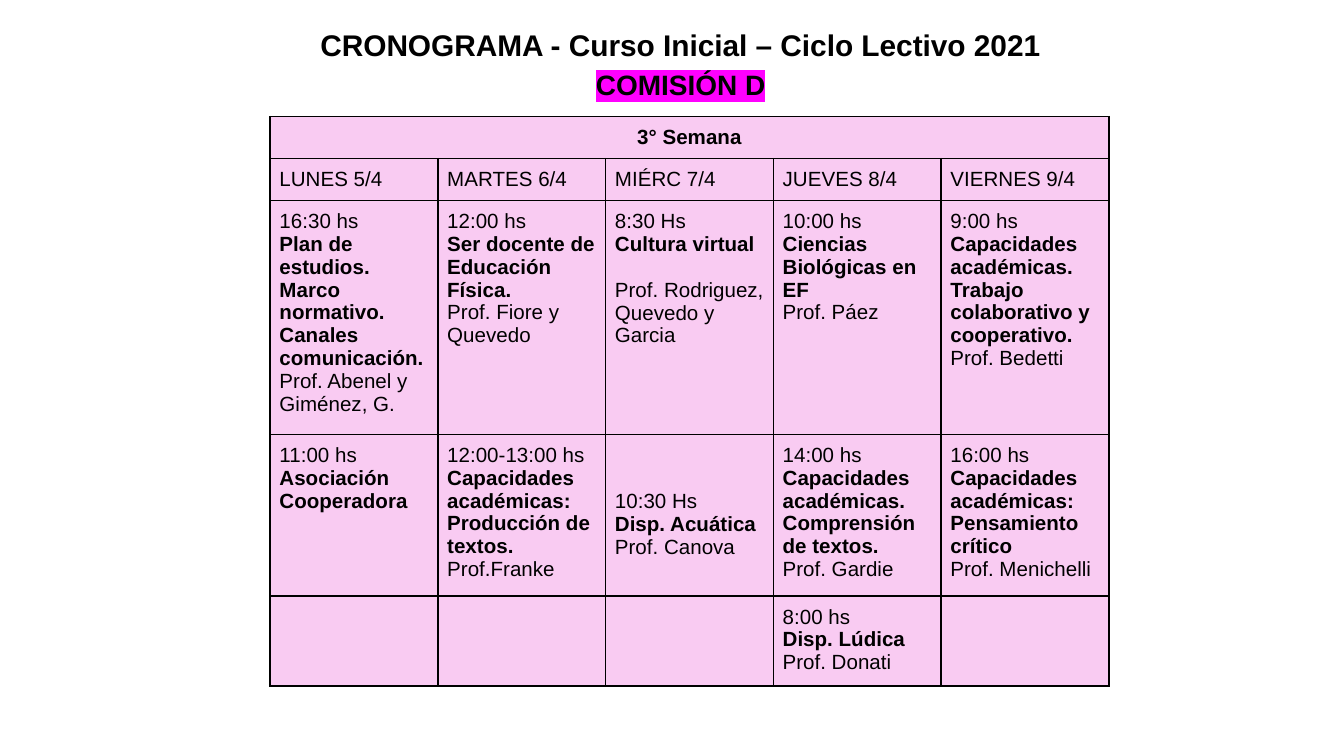
from lxml import etree
from pptx import Presentation
from pptx.dml.color import RGBColor
from pptx.enum import text
from pptx.oxml.ns import qn
from pptx.util import Pt

# Content
TITLE = [("CRONOGRAMA - Curso Inicial – Ciclo Lectivo 2021", 16), ("COMISIÓN D", 15)]
WEEK = "3° Semana"
DAYS = ["LUNES 5/4", "MARTES 6/4", "MIÉRC 7/4", "JUEVES 8/4", "VIERNES 9/4"]
# Each class: hour, subject lines, teachers
CLASSES = [
    [
        ["16:30 hs", "Plan de estudios. Marco normativo. Canales comunicación.",
         "Prof. Abenel y Giménez, G."],
        ["12:00 hs", "Ser docente de Educación Física.", "Prof. Fiore y Quevedo"],
        ["8:30 Hs", "Cultura virtual", "Prof. Rodriguez, Quevedo y Garcia"],
        ["10:00 hs", "Ciencias Biológicas en EF", "Prof. Páez"],
        ["9:00 hs", "Capacidades académicas. Trabajo colaborativo y cooperativo.",
         "Prof. Bedetti"],
    ],
    [
        ["11:00 hs", "Asociación Cooperadora"],
        ["12:00-13:00 hs", "Capacidades académicas: Producción de textos.", "Prof.Franke"],
        ["10:30 Hs", "Disp. Acuática", "Prof. Canova"],
        ["14:00 hs", "Capacidades académicas. Comprensión de textos.", "Prof. Gardie"],
        ["16:00 hs", "Capacidades académicas:", "Pensamiento crítico", "Prof. Menichelli"],
    ],
    [[], [], [], ["8:00 hs", "Disp. Lúdica", "Prof. Donati"], []],
]

# Layout and style
COLORS = {"text": "000000", "cell": "F9CBF2", "highlight": "FF00FF"}
FONT = "Arial"
ROW_HEIGHTS = [22.5, 22.5, 125.3, 86.6, 48.2]
COL_WIDTH = 89.86
LEFT, TOP = 144.7, 62.5
MARGIN = 5.04
LINE = 12.3  # height of one line of cell text


def write(p, words, size, bold):
    r = p.add_run()
    r.text = words
    for key, value in {"size": Pt(size), "bold": bold, "name": FONT}.items():
        setattr(r.font, key, value)
    r.font.color.rgb = RGBColor.from_string(COLORS["text"])
    return r


def add_color(parent, tag, color):
    el = etree.SubElement(parent, qn(tag))
    etree.SubElement(el, qn("a:srgbClr"), val=color)
    return el


def format_cell(cell):
    for side in ("left", "right", "top", "bottom"):
        setattr(cell, f"margin_{side}", Pt(MARGIN))
    cell.fill.solid()
    cell.fill.fore_color.rgb = RGBColor.from_string(COLORS["cell"])
    tc_pr = cell._tc.get_or_add_tcPr()
    for i, side in enumerate("LRTB"):
        ln = etree.Element(qn(f"a:ln{side}"), w=str(Pt(1)))
        add_color(ln, "a:solidFill", COLORS["text"])
        tc_pr.insert(i, ln)


def fill_class(cell, lines):
    tf = cell.text_frame
    for i, words in enumerate(lines):
        p = tf.add_paragraph() if i else tf.paragraphs[0]
        write(p, words, 11, i > 0 and not words.startswith("Prof."))


prs = Presentation()
prs.slide_width, prs.slide_height = Pt(720), Pt(405)
s = prs.slides.add_slide(prs.slide_layouts[5])

# Timetable
n_rows, n_cols = len(ROW_HEIGHTS), len(DAYS)
table = s.shapes.add_table(n_rows, n_cols, Pt(LEFT), Pt(TOP),
                           Pt(COL_WIDTH * n_cols), Pt(sum(ROW_HEIGHTS))).table
for col in table.columns:
    col.width = Pt(COL_WIDTH)
for row, height in zip(table.rows, ROW_HEIGHTS):
    row.height = Pt(height)
    for cell in row.cells:
        format_cell(cell)

# Week heading across all days
table.cell(0, 0).merge(table.cell(0, n_cols - 1))
p = table.cell(0, 0).text_frame.paragraphs[0]
p.alignment = text.PP_ALIGN.CENTER
write(p, WEEK, 11, True)

# Days and classes
for i, row in enumerate([[[day] for day in DAYS]] + CLASSES, start=1):
    for j, lines in enumerate(row):
        fill_class(table.cell(i, j), lines)

# Wednesday: one line free above the teachers, two above the second class
table.cell(2, 2).text_frame.paragraphs[-1].space_before = Pt(LINE)
table.cell(3, 2).margin_top = Pt(MARGIN + 2 * LINE)

# Title
title = s.shapes.title
title.left, title.top, title.width, title.height = Pt(139.7), Pt(4.3), Pt(450), Pt(57.6)
tf = title.text_frame
for key, value in {"margin_left": Pt(7.2), "margin_right": Pt(7.2), "margin_top": Pt(7.2),
                   "margin_bottom": Pt(7.2), "word_wrap": True,
                   "auto_size": text.MSO_AUTO_SIZE.NONE,
                   "vertical_anchor": text.MSO_ANCHOR.TOP}.items():
    setattr(tf, key, value)
for i, (words, size) in enumerate(TITLE):
    p = tf.add_paragraph() if i else tf.paragraphs[0]
    for key, value in {"alignment": text.PP_ALIGN.CENTER, "line_spacing": 1.15,
                       "space_before": Pt(0)}.items():
        setattr(p, key, value)
    r = write(p, words, size, True)

# Highlight on the last title line
r_pr = r.font._element
highlight = add_color(r_pr, "a:highlight", COLORS["highlight"])
r_pr.find(qn("a:solidFill")).addnext(highlight)

prs.save("out.pptx")
